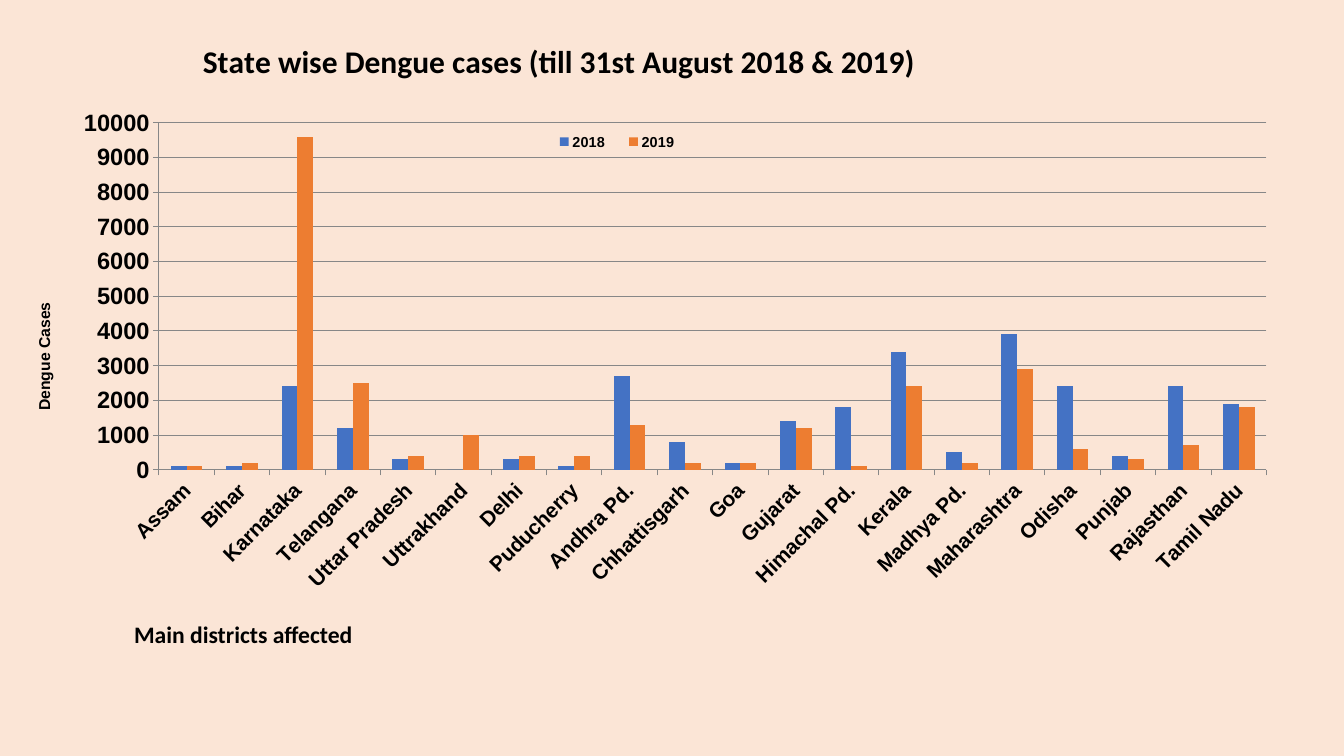
from lxml import etree
from pptx import Presentation
from pptx import util as u
from pptx.chart.data import CategoryChartData
from pptx.dml.color import RGBColor
from pptx.enum import chart as kinds
from pptx.enum import text
from pptx.oxml.ns import qn

WIDTH, HEIGHT = 14.22, 8
COLORS = {"background": "FBE5D6", "text": "000000", "line": "878787",
          "2018": "4472C4", "2019": "ED7D31"}
TITLE = "State wise Dengue cases (till 31st August 2018 & 2019)"
AXIS_TITLE = "Dengue Cases"
FOOTER = "Main districts affected"
YEARS = ("2018", "2019")
CASES = [  # state, cases in 2018, cases in 2019
    ("Assam", 100, 100), ("Bihar", 100, 200), ("Karnataka", 2400, 9600),
    ("Telangana", 1200, 2500), ("Uttar Pradesh", 300, 400),
    ("Uttrakhand", 0, 1000), ("Delhi", 300, 400), ("Puducherry", 100, 400),
    ("Andhra Pd.", 2700, 1300), ("Chhattisgarh", 800, 200), ("Goa", 200, 200),
    ("Gujarat", 1400, 1200), ("Himachal Pd.", 1800, 100),
    ("Kerala", 3400, 2400), ("Madhya Pd.", 500, 200),
    ("Maharashtra", 3900, 2900), ("Odisha", 2400, 600), ("Punjab", 400, 300),
    ("Rajasthan", 2400, 700), ("Tamil Nadu", 1900, 1800),
]


def color(name):
    return RGBColor.from_string(COLORS[name])


def set_font(font, size, face="Arial"):
    font.size, font.name, font.bold = u.Pt(size), face, True
    font.color.rgb = color("text")


def add_span(frame, words, size, face):
    span = frame.paragraphs[0].add_run()
    span.text = words
    set_font(span.font, size, face)


def place(element, index, **shares):
    """Position a chart part by shares of the chart's size."""
    for old in element.findall(qn("c:layout")):
        element.remove(old)
    layout = etree.Element(qn("c:layout"))
    manual = etree.SubElement(layout, qn("c:manualLayout"))
    if element.tag == qn("c:plotArea"):
        etree.SubElement(manual, qn("c:layoutTarget")).set("val", "inner")
    for mode in ("xMode", "yMode"):
        etree.SubElement(manual, qn(f"c:{mode}")).set("val", "edge")
    for name, share in shares.items():
        etree.SubElement(manual, qn(f"c:{name}")).set("val", str(share))
    element.insert(index, layout)


def add_cases_chart(page):
    data = CategoryChartData()
    states, *columns = zip(*CASES)
    data.categories = states
    for year, values in zip(YEARS, columns):
        data.add_series(year, values)
    chart = page.shapes.add_chart(
        kinds.XL_CHART_TYPE.COLUMN_CLUSTERED, u.Inches(0.2), u.Inches(0.23),
        u.Inches(13.47), u.Inches(6.68), data).chart
    chart.font.size, chart.font.name = u.Pt(10), "Calibri"
    chart.font.color.rgb = color("text")

    plot = chart.plots[0]
    plot.gap_width, plot.overlap, plot.vary_by_categories = 150, 0, False
    for series in plot.series:
        series.format.fill.solid()
        series.format.fill.fore_color.rgb = color(series.name)

    values, names = chart.value_axis, chart.category_axis
    values.minimum_scale, values.maximum_scale = 0, 10000
    values.major_unit = 1000
    values.has_major_gridlines = True
    for axis, size in ((values, 18), (names, 16)):
        set_font(axis.tick_labels.font, size)
        axis.major_tick_mark = kinds.XL_TICK_MARK.OUTSIDE
        axis.format.line.color.rgb = color("line")
    values.major_gridlines.format.line.color.rgb = color("line")
    body = names._element.find(qn("c:txPr")).find(qn("a:bodyPr"))
    body.set("rot", "-2700000")
    body.set("vert", "horz")

    add_span(chart.chart_title.text_frame, TITLE, 24, "Calibri")
    chart.chart_title.include_in_layout = False
    add_span(values.axis_title.text_frame, AXIS_TITLE, 12, "Arial")
    body = values.axis_title.text_frame._txBody.find(qn("a:bodyPr"))
    body.set("rot", "-5400000")
    body.set("vert", "horz")
    chart.has_legend = True
    legend = chart.legend
    legend.position = kinds.XL_LEGEND_POSITION.BOTTOM
    legend.include_in_layout = True
    set_font(legend.font, 11)

    place(chart.chart_title._element, 1, x=0.14, y=0.02)
    place(values.axis_title._element, 1, x=0.01, y=0.44)
    place(legend._element, 1, x=0.41, y=0.17, w=0.12, h=0.04)
    place(plot._element.getparent(), 0, x=0.11, y=0.16, w=0.87, h=0.55)


def add_footer(page):
    box = page.shapes.add_textbox(u.Inches(1.32), u.Inches(6.51),
                                  u.Inches(12.03), u.Inches(0.4))
    frame = box.text_frame
    frame.word_wrap = True
    frame.auto_size = text.MSO_AUTO_SIZE.SHAPE_TO_FIT_TEXT
    add_span(frame, FOOTER, 18, "Calibri")


def main():
    deck = Presentation()
    deck.slide_width, deck.slide_height = u.Inches(WIDTH), u.Inches(HEIGHT)
    page = deck.slides.add_slide(deck.slide_layouts.get_by_name("Blank"))
    page.background.fill.solid()
    page.background.fill.fore_color.rgb = color("background")
    add_cases_chart(page)
    add_footer(page)
    deck.save("out.pptx")


if __name__ == "__main__":
    main()
